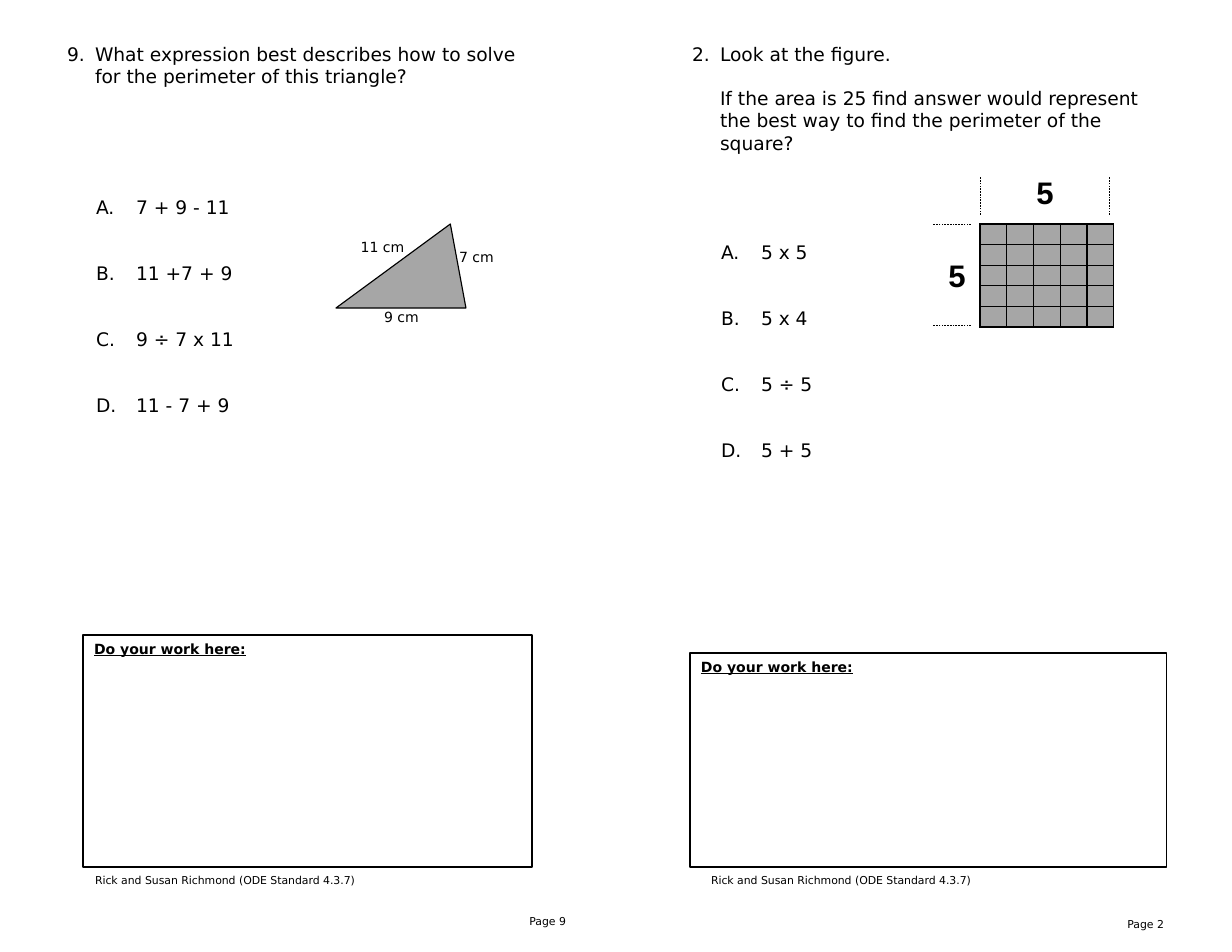
from collections import namedtuple
from dataclasses import dataclass

import pptx
import pptx.dml.color
import pptx.enum.dml
import pptx.enum.shapes
import pptx.enum.text
import pptx.oxml.ns
import pptx.util
from lxml import etree

PX_PER_INCH = 112
Box = namedtuple("Box", "left top width height")
ALIGN = pptx.enum.text.PP_ALIGN


@dataclass(frozen=True)
class Theme:
    ink: pptx.dml.color.RGBColor = pptx.dml.color.RGBColor(0, 0, 0)
    shade: pptx.dml.color.RGBColor = pptx.dml.color.RGBColor(0xA6, 0xA6, 0xA6)
    body_font: str = "DejaVu Sans"
    figure_font: str = "Arial"
    question: int = 12
    label: int = 9
    small: int = 7
    dimension: int = 20
    outline: float = 0.75
    guide: float = 0.25
    text_line: int = 14


THEME = Theme()


def px(length):
    return pptx.util.Emu(round(length * 914400 / PX_PER_INCH))


def inside(area, left, top, width, height):
    """Box of the given size, offset from the corner of area."""
    return Box(area.left + left, area.top + top, width, height)


def emu(box):
    return [px(length) for length in box]


def add_run(paragraph, text, size, font=THEME.body_font, bold=False, underline=False):
    run = paragraph.add_run()
    run.text = text
    run.font.name = font
    run.font.size = pptx.util.Pt(size)
    run.font.bold = bold
    run.font.underline = underline
    run.font.color.rgb = THEME.ink


def add_frame(slide, box):
    frame = slide.shapes.add_textbox(*emu(box)).text_frame
    frame.word_wrap = True
    return frame


def add_label(slide, box, text, size, align=ALIGN.LEFT, **style):
    paragraph = add_frame(slide, box).paragraphs[0]
    paragraph.alignment = align
    add_run(paragraph, text, size, **style)


def add_outlined(slide, kind, box):
    shape = slide.shapes.add_shape(kind, *emu(box))
    shape.shadow.inherit = False
    shape.fill.background()
    shape.line.color.rgb = THEME.ink
    shape.line.width = pptx.util.Pt(THEME.outline)
    return shape


def sub(parent, tag, **attributes):
    return etree.SubElement(parent, pptx.oxml.ns.qn(tag), **attributes)


def indent(paragraph, margin, hanging=0, scheme=None, start=1):
    """Indent a paragraph, numbering it when a scheme is given."""
    properties = paragraph._p.get_or_add_pPr()
    properties.set("marL", str(px(margin)))
    properties.set("indent", str(-px(hanging)))
    if scheme:
        sub(properties, "a:buFont", typeface="+mj-lt")
        sub(properties, "a:buAutoNum", type=scheme, startAt=str(start))


def add_question(slide, box, number, prompts, answers, lines_before_answers):
    frame = add_frame(slide, box)
    for index, prompt in enumerate(prompts):
        if index == 0:
            paragraph = frame.paragraphs[0]
            indent(paragraph, 28, 28, "arabicPeriod", number)
        else:
            paragraph = frame.add_paragraph()
            paragraph.space_before = pptx.util.Pt(THEME.text_line)
            indent(paragraph, 28)
        add_run(paragraph, prompt, THEME.question)
    for index, answer in enumerate(answers):
        paragraph = frame.add_paragraph()
        blank_lines = 2 if index else lines_before_answers
        paragraph.space_before = pptx.util.Pt(blank_lines * THEME.text_line)
        indent(paragraph, 69, 40, "alphaUcPeriod")
        add_run(paragraph, answer, THEME.question)


def add_work_area(slide, box):
    area = add_outlined(slide, pptx.enum.shapes.MSO_SHAPE.RECTANGLE, box)
    frame = area.text_frame
    frame.word_wrap = True
    frame.vertical_anchor = pptx.enum.text.MSO_ANCHOR.TOP
    frame.paragraphs[0].alignment = ALIGN.LEFT
    add_run(frame.paragraphs[0], "Do your work here:", THEME.label, bold=True, underline=True)


def add_footer(slide, credit_box, page_box, page):
    add_label(slide, credit_box, "Rick and Susan Richmond (ODE Standard 4.3.7)", THEME.small)
    add_label(slide, page_box, f"Page {page}", THEME.small, ALIGN.RIGHT)


def add_triangle(slide, area):
    triangle = add_outlined(slide, pptx.enum.shapes.MSO_SHAPE.ISOSCELES_TRIANGLE, area)
    triangle.adjustments[0] = 0.88
    triangle.fill.solid()
    triangle.fill.fore_color.rgb = THEME.shade
    for side, left, top in (("7 cm", 103, 19), ("9 cm", 28, 79), ("11 cm", 9, 9)):
        add_label(slide, inside(area, left, top, 75, 28), side, THEME.label, ALIGN.CENTER)


def style_cell(cell):
    cell.margin_left = cell.margin_right = cell.margin_top = cell.margin_bottom = 0
    properties = cell._tc.get_or_add_tcPr()
    for edge in ("a:lnL", "a:lnR", "a:lnT", "a:lnB"):
        border = sub(properties, edge, w=str(pptx.util.Pt(1)))
        sub(sub(border, "a:solidFill"), "a:srgbClr", val=str(THEME.ink))
    cell.fill.solid()
    cell.fill.fore_color.rgb = THEME.shade
    sub(cell.text_frame.paragraphs[0]._p, "a:endParaRPr", sz="600")


def add_guide(slide, start, end):
    guide = slide.shapes.add_connector(
        pptx.enum.shapes.MSO_CONNECTOR.STRAIGHT, *emu(start + end))
    guide.line.color.rgb = THEME.ink
    guide.line.width = pptx.util.Pt(THEME.guide)
    guide.line.dash_style = pptx.enum.dml.MSO_LINE.DASH
    sub(guide._element.spPr, "a:effectLst")


def add_square(slide, area, side):
    """Grid of side by side cells, with a dimension above and to the left."""
    table = slide.shapes.add_table(side, side, *emu(area)).table
    table.first_row = table.horz_banding = False
    for column in table.columns:
        column.width = px(area.width / side)
    for row in table.rows:
        row.height = px(area.height / side)
    for cell in table.iter_cells():
        style_cell(cell)
    for x in (area.left, area.left + 129):
        add_guide(slide, (x, area.top - 9), (x, area.top - 47))
    for y in (area.top, area.top + 101):
        add_guide(slide, (area.left - 9, y), (area.left - 47, y))
    for left, top in ((37, -56), (-51, 27)):
        add_label(slide, inside(area, left, top, 56, 49), str(side), THEME.dimension,
                  ALIGN.CENTER, font=THEME.figure_font, bold=True)


def add_triangle_page(slide, page):
    add_question(
        slide, inside(page, 0, 0, 476, 441), 9,
        ["What expression best describes how to solve for the perimeter of this triangle?"],
        ["7 + 9 - 11", "11 +7 + 9", "9 ÷ 7 x 11", "11 - 7 + 9"], 5)
    add_triangle(slide, inside(page, 280, 187, 130, 84))
    add_work_area(slide, inside(page, 27, 598, 449, 232))
    add_footer(slide, inside(page, 28, 831, 299, 25), inside(page, 429, 872, 92, 34), 9)


def add_square_page(slide, page):
    add_question(
        slide, inside(page, 0, 0, 476, 486), 2,
        ["Look at the figure.",
         "If the area is 25 find answer would represent the best way to find "
         "the perimeter of the square?"],
        ["5 x 5", "5 x 4", "5 ÷ 5", "5 + 5"], 4)
    add_square(slide, inside(page, 299, 187, 134, 103), 5)
    add_work_area(slide, inside(page, 9, 616, 477, 214))
    add_footer(slide, inside(page, 19, 831, 299, 25), inside(page, 402, 875, 92, 34), 2)


def main():
    booklet = pptx.Presentation()
    booklet.slide_width, booklet.slide_height = px(1232), px(952)
    slide = booklet.slides.add_slide(booklet.slide_layouts[6])
    add_triangle_page(slide, Box(56, 37, 560, 915))
    add_square_page(slide, Box(681, 37, 551, 915))
    booklet.save("out.pptx")


if __name__ == "__main__":
    main()
